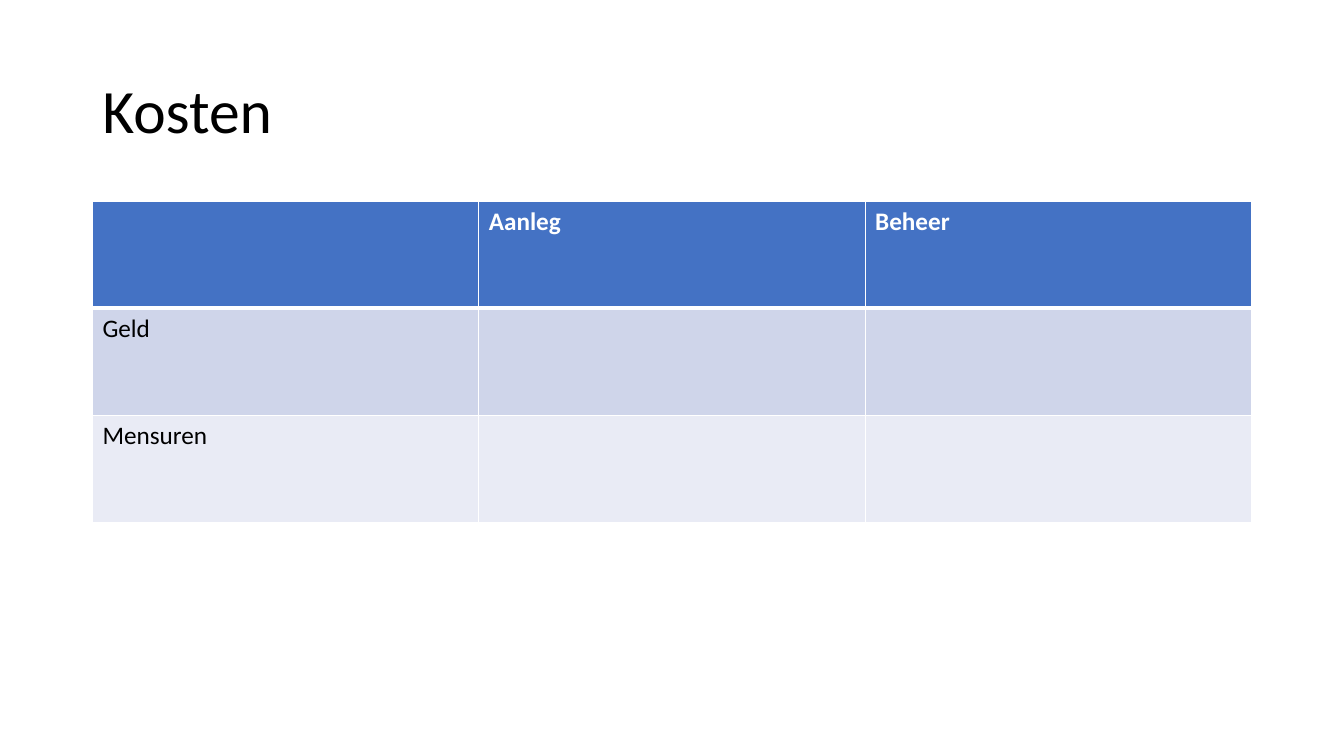
from lxml import etree
from pptx import Presentation
from pptx import util as u
from pptx.dml.color import RGBColor
from pptx.enum import text
from pptx.oxml import ns

COLORS = {"black": "000000", "white": "FFFFFF", "header": "4472C4",
          "band_dark": "CFD5EA", "band_light": "E9EBF5"}
FONT = "Calibri"
ROWS = [
    (["", "Aanleg", "Beheer"], "header"),
    (["Geld", "", ""], "band_dark"),
    (["Mensuren", "", ""], "band_light"),
]


def format_runs(paragraph, size, color, bold=False):
    """Apply the slide's font to every run of a paragraph."""
    for run in paragraph.runs:
        run.font.name = FONT
        run.font.size = u.Pt(size)
        run.font.bold = bold
        run.font.color.rgb = RGBColor.from_string(COLORS[color])


def add_borders(cell, top, bottom):
    """Draw white borders around a cell, with widths in points."""
    properties = cell._tc.get_or_add_tcPr()
    for side, width in (("L", 1), ("R", 1), ("T", top), ("B", bottom)):
        line = etree.SubElement(properties, ns.qn(f"a:ln{side}"), w=str(u.Pt(width)))
        fill = etree.SubElement(line, ns.qn("a:solidFill"))
        etree.SubElement(fill, ns.qn("a:srgbClr"), val=COLORS["white"])


def add_title(slide, left, top, width, height):
    """Place the slide title, vertically centred in its box."""
    shape = slide.shapes.add_textbox(left, top, width, height)
    frame = shape.text_frame
    frame.word_wrap = True
    frame.vertical_anchor = text.MSO_ANCHOR.MIDDLE
    frame.text = "Kosten"
    paragraph = frame.paragraphs[0]
    paragraph.line_spacing = 0.9
    format_runs(paragraph, 44, "black")


def add_cost_table(slide, left, top, width, height):
    """Place the cost table with equal rows and columns in its box."""
    shape = slide.shapes.add_table(len(ROWS), len(ROWS[0][0]), left, top, width, height)
    table = shape.table
    for row_index, (labels, fill) in enumerate(ROWS):
        is_header = row_index == 0
        for column_index, label in enumerate(labels):
            cell = table.cell(row_index, column_index)
            add_borders(cell, 3 if row_index == 1 else 1, 3 if is_header else 1)
            cell.fill.solid()
            cell.fill.fore_color.rgb = RGBColor.from_string(COLORS[fill])
            if label:
                cell.text_frame.text = label
                format_runs(cell.text_frame.paragraphs[0], 18,
                            "white" if is_header else "black", is_header)


def main():
    """Build the cost slide and save it."""
    presentation = Presentation()
    presentation.slide_width = u.Cm(33.87)
    presentation.slide_height = u.Cm(19.05)
    slide = presentation.slides.add_slide(presentation.slide_layouts[6])
    left, width = u.Cm(2.33), u.Cm(29.21)
    add_title(slide, left, u.Cm(1.01), width, u.Cm(3.68))
    add_cost_table(slide, left, u.Cm(5.07), width, u.Cm(8.1))
    presentation.save("out.pptx")


if __name__ == "__main__":
    main()
